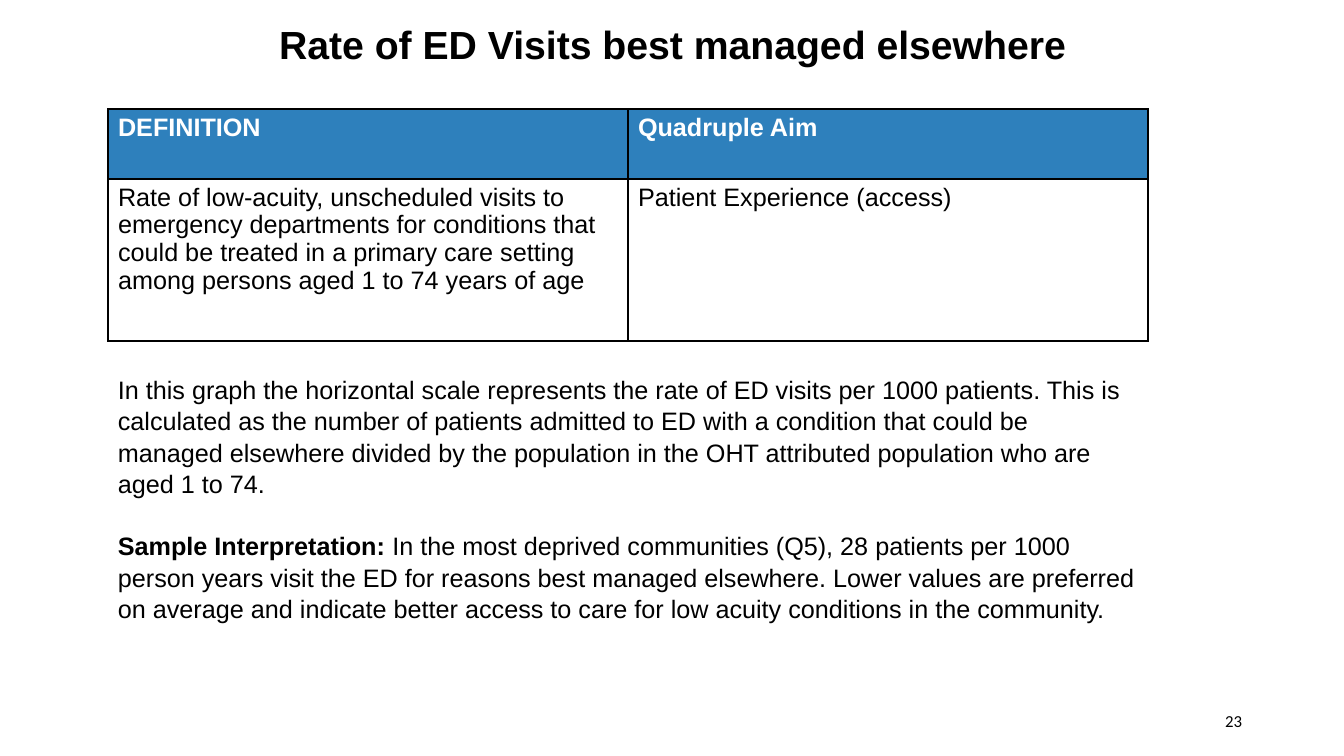
from lxml.etree import SubElement
from pptx import Presentation
from pptx.dml.color import RGBColor
from pptx.enum.text import MSO_ANCHOR, PP_ALIGN
from pptx.oxml.ns import qn
from pptx.util import Emu, Pt

EMU_PER_PX = 914400 / 100.8
BLACK = RGBColor(0, 0, 0)
WHITE = RGBColor(255, 255, 255)
HEADER_BLUE = RGBColor(0x2E, 0x80, 0xBC)

TITLE = "Rate of ED Visits best managed elsewhere"
MEASURE = [
    ["DEFINITION", "Quadruple Aim"],
    ["Rate of low-acuity, unscheduled visits to emergency departments for "
     "conditions that could be treated in a primary care setting among persons "
     "aged 1 to 74 years of age", "Patient Experience (access)"],
]
EXPLANATION = [
    [("In this graph the horizontal scale represents the rate of ED visits per "
      "1000 patients. This is calculated as the number of patients admitted to ED "
      "with a condition that could be managed elsewhere divided by the population "
      "in the OHT attributed population who are aged 1 to 74.", False)],
    [("Sample Interpretation: ", True),
     ("In the most deprived communities (Q5), 28 patients per 1000 person years "
      "visit the ED for reasons best managed elsewhere. Lower values are preferred "
      "on average and indicate better access to care for low acuity conditions in "
      "the community.", False)],
]


def px(length):
    """Turn pixels into EMU."""
    return Emu(round(length * EMU_PER_PX))


def add_run(paragraph, text, size=18, bold=False, color=BLACK, font="Arial"):
    """Append one formatted run."""
    run = paragraph.add_run()
    run.text = text
    run.font.name = font
    run.font.size = Pt(size)
    run.font.bold = bold
    run.font.color.rgb = color


def add_text_frame(slide, left, top, width, height, anchor=MSO_ANCHOR.TOP):
    """Add a wrapping text box and return its frame."""
    frame = slide.shapes.add_textbox(px(left), px(top), px(width), px(height)).text_frame
    frame.word_wrap = True
    frame.vertical_anchor = anchor
    return frame


def add_title(slide):
    """Add the centred slide title."""
    heading = add_text_frame(slide, 78, 24, 1189, 85)
    heading.margin_top = px(2)
    line = heading.paragraphs[0]
    line.alignment = PP_ALIGN.CENTER
    line.line_spacing = 0.9
    add_run(line, TITLE, size=28, bold=True)


def add_borders(cell):
    """Draw thin black lines on all four sides of a cell."""
    properties = cell._tc.get_or_add_tcPr()
    for position, side in enumerate(("a:lnL", "a:lnR", "a:lnT", "a:lnB")):
        border = SubElement(properties, qn(side), w=str(Pt(1)))
        fill = SubElement(border, qn("a:solidFill"))
        SubElement(fill, qn("a:srgbClr"), val=str(BLACK))
        properties.insert(position, border)


def add_measure_table(slide):
    """Add the table of definition and aim."""
    table = slide.shapes.add_table(2, 2, px(108), px(109), px(1040), px(232)).table
    for row, height in zip(table.rows, (70, 162)):
        row.height = px(height)
    for r, texts in enumerate(MEASURE):
        is_header = r == 0
        for c, text in enumerate(texts):
            cell = table.cell(r, c)
            cell.fill.solid()
            cell.fill.fore_color.rgb = HEADER_BLUE if is_header else WHITE
            add_borders(cell)
            paragraph = cell.text_frame.paragraphs[0]
            paragraph.line_spacing = 0.98
            add_run(paragraph, text, bold=is_header, color=WHITE if is_header else BLACK)


def add_explanation(slide):
    """Add the paragraphs on how to read the rate."""
    body = add_text_frame(slide, 108, 368, 1040, 254)
    for i, runs in enumerate(EXPLANATION):
        paragraph = body.add_paragraph() if i else body.paragraphs[0]
        paragraph.line_spacing = 1.04
        if i:
            paragraph.space_before = Pt(22)
        for text, bold in runs:
            add_run(paragraph, text, bold=bold)


def add_slide_number(slide):
    """Add the slide number at the lower right."""
    footer = add_text_frame(slide, 950, 701, 302, 40, MSO_ANCHOR.MIDDLE)
    number = footer.paragraphs[0]
    number.alignment = PP_ALIGN.RIGHT
    add_run(number, "23", size=12, font="Calibri")


def main():
    """Build and save the slide."""
    presentation = Presentation()
    presentation.slide_width = px(1344)
    presentation.slide_height = px(756)
    slide = presentation.slides.add_slide(presentation.slide_layouts[6])
    add_slide_number(slide)
    add_title(slide)
    add_measure_table(slide)
    add_explanation(slide)
    presentation.save("out.pptx")


if __name__ == "__main__":
    main()
